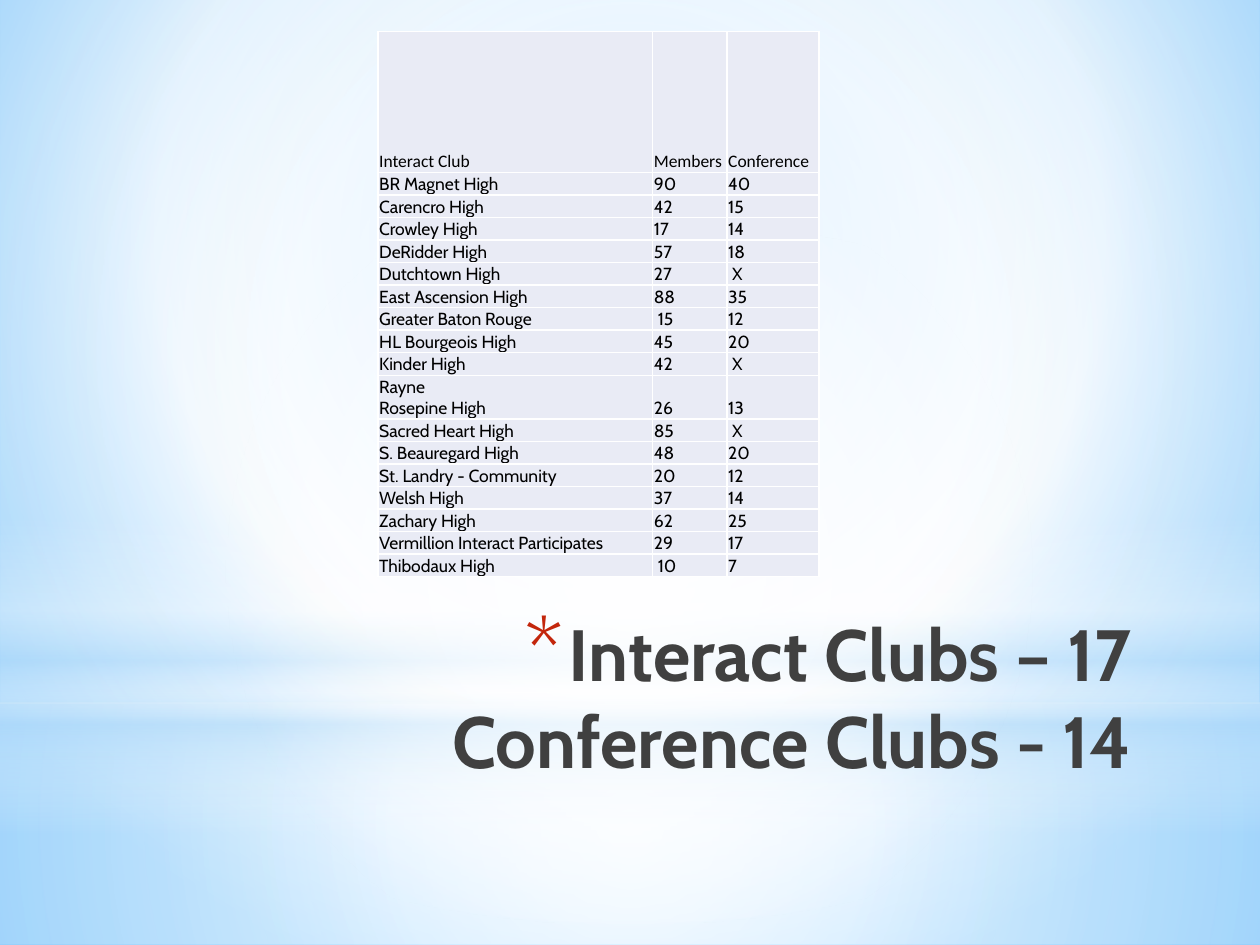
"""Build the Interact clubs slide: a membership table above a headline."""
from lxml.etree import SubElement
from pptx import Presentation
from pptx.dml.color import RGBColor
from pptx.enum.shapes import MSO_SHAPE as Preset
from pptx.enum.text import MSO_ANCHOR as Anchor, MSO_AUTO_SIZE as AutoSize, PP_ALIGN as Align
from pptx.oxml import parse_xml
from pptx.oxml.ns import nsdecls, qn
from pptx.util import Inches, Pt

WHITE = RGBColor(0xFF, 0xFF, 0xFF)
BLACK = RGBColor(0x00, 0x00, 0x00)
CHARCOAL = RGBColor(0x40, 0x40, 0x40)
RED = RGBColor(0xC3, 0x26, 0x0C)
LAVENDER = RGBColor(0xE9, 0xEB, 0xF5)
SKY = RGBColor(0x9E, 0xD5, 0xFF)
AZURE = RGBColor(0x5B, 0xB9, 0xFF)
PALE_BLUE = RGBColor(0xB4, 0xDC, 0xFA)

WIDTH, HEIGHT = 10, 7.5
CENTRE = (50, 50, 50, 50)
BACKDROP = [(0, SKY, 100), (60, WHITE, 100), (100, AZURE, 100)]
BACKDROP_FOCUS = (20, 10, 20, 60)
LAYERS = [
    (Preset.RECTANGLE, 5.58, 1.92, CENTRE,
     [(0, WHITE, 91), (37, WHITE, 76), (100, PALE_BLUE, 79)]),
    (Preset.RECTANGLE, 0, 5.58, CENTRE,
     [(0, WHITE, 89), (48, WHITE, 62), (100, PALE_BLUE, 79)]),
    (Preset.RECTANGLE, 4.12, 2.5, None,
     [(0, WHITE, 0), (29, WHITE, 30), (45, PALE_BLUE, 40),
      (55, WHITE, 26), (65, PALE_BLUE, 60), (100, WHITE, 0)]),
    (Preset.OVAL, 1.75, 5.58, CENTRE, [(0, WHITE, 100), (56, WHITE, 0)]),
]
HEADLINE = ["Interact Clubs – 17", "Conference Clubs - 14"]
CLUBS = [
    ("Interact Club", "Members", "Conference"),
    ("BR Magnet High", "90", "40"),
    ("Carencro High", "42", "15"),
    ("Crowley High", "17", "14"),
    ("DeRidder High", "57", "18"),
    ("Dutchtown High", "27", " X"),
    ("East Ascension High", "88", "35"),
    ("Greater Baton Rouge", " 15", "12 "),
    ("HL Bourgeois High", "45", "20"),
    ("Kinder High", "42", " X"),
    ("Rayne\nRosepine High", "26", "13"),
    ("Sacred Heart High", "85", " X"),
    ("S. Beauregard High", "48", "20"),
    ("St. Landry - Community", "20", "12"),
    ("Welsh High", "37", "14"),
    ("Zachary High", "62", "25"),
    ("Vermillion Interact Participates", "29", "17"),
    ("Thibodaux High", " 10", "7"),
]
COLUMNS = [2.18, 0.59, 0.73]
HEADER_ROW, LINE_ROW, EXTRA_LINE = 1.12, 0.15, 0.12


def set_gradient(parent, stops, focus):
    """Swap the parent's empty fill for a circular or top-down gradient."""
    gradient = parse_xml(f'<a:gradFill {nsdecls("a")} rotWithShape="1"/>')
    stop_list = SubElement(gradient, qn("a:gsLst"))
    for place, colour, opacity in stops:
        stop = SubElement(stop_list, qn("a:gs"), pos=str(place * 1000))
        shade = SubElement(stop, qn("a:srgbClr"), val=str(colour))
        if opacity < 100:
            SubElement(shade, qn("a:alpha"), val=str(opacity * 1000))
    if focus:
        circle = SubElement(gradient, qn("a:path"), path="circle")
        sides = {side: str(share * 1000) for side, share in zip("ltrb", focus)}
        SubElement(circle, qn("a:fillToRect"), sides)
    else:
        SubElement(gradient, qn("a:lin"), ang="5400000", scaled="0")
    parent.replace(parent.find(qn("a:noFill")), gradient)


def add_layer(page, preset, top, height, focus, stops):
    """Lay a full-width translucent band over the background."""
    shape = page.shapes.add_shape(preset, 0, Inches(top), Inches(WIDTH), Inches(height))
    shape.shadow.inherit = False
    shape.line.fill.background()
    shape.fill.background()
    set_gradient(shape.element.spPr, stops, focus)


def style_span(span, font, size, colour, bold=False):
    """Set the font of one run."""
    span.font.name, span.font.size, span.font.bold = font, Pt(size), bold
    span.font.color.rgb = colour


def write_headline(page):
    """Place the title in front of the layers with its asterisk bullet."""
    title = page.shapes.title
    title.element.getparent().append(title.element)
    title.left, title.top = Inches(1.96), Inches(4.78)
    title.width, title.height = Inches(7.12), Inches(1.25)
    frame = title.text_frame
    frame.auto_size, frame.word_wrap = AutoSize.NONE, True
    frame.vertical_anchor = Anchor.TOP
    para = frame.paragraphs[0]
    para.alignment = Align.RIGHT
    for number, line in enumerate(HEADLINE):
        if number:
            para.add_line_break()
        span = para.add_run()
        span.text = line
        style_span(span, "Cabin", 41.4, CHARCOAL, True)
    props = para._p.get_or_add_pPr()
    props.set("marL", str(Inches(0.35)))
    props.set("indent", str(-Inches(0.35)))
    SubElement(SubElement(props, qn("a:buClr")), qn("a:srgbClr"), val=str(RED))
    SubElement(props, qn("a:buSzPct"), val="128000")
    SubElement(props, qn("a:buFont"), typeface="Cabin")
    SubElement(props, qn("a:buChar"), char="*")


def fill_cell(cell, text, font):
    """Write one cell with its fill, insets and white borders."""
    cell.vertical_anchor = Anchor.BOTTOM
    cell.margin_left = cell.margin_right = cell.margin_top = Inches(0.01)
    cell.margin_bottom = 0
    cell.fill.solid()
    cell.fill.fore_color.rgb = LAVENDER
    for number, line in enumerate(text.split("\n")):
        frame = cell.text_frame
        para = frame.add_paragraph() if number else frame.paragraphs[0]
        span = para.add_run()
        span.text = line
        style_span(span, font, 10, BLACK)
    props = cell._tc.get_or_add_tcPr()
    for place, side in enumerate("LRTB"):
        props.insert(place, parse_xml(
            f'<a:ln{side} {nsdecls("a")} w="{Pt(1)}"><a:solidFill>'
            f'<a:srgbClr val="{WHITE}"/></a:solidFill></a:ln{side}>'))


def add_club_table(page):
    """Add the table of clubs, members and conference places."""
    heights = [HEADER_ROW] + [LINE_ROW + EXTRA_LINE * club[0].count("\n") for club in CLUBS[1:]]
    table = page.shapes.add_table(
        len(CLUBS), len(COLUMNS), Inches(3), Inches(0.25),
        Inches(sum(COLUMNS)), Inches(sum(heights))).table
    table.first_row = table.horz_banding = False
    for column, width in zip(table.columns, COLUMNS):
        column.width = Inches(width)
    for number, (row, height, club) in enumerate(zip(table.rows, heights, CLUBS)):
        row.height = Inches(height)
        for cell, text in zip(row.cells, club):
            fill_cell(cell, text, "Cabin" if number else "Calibri")


def main():
    """Assemble and save the deck."""
    deck = Presentation()
    deck.slide_width, deck.slide_height = Inches(WIDTH), Inches(HEIGHT)
    page = deck.slides.add_slide(deck.slide_layouts[5])
    set_gradient(page.element.cSld.get_or_add_bgPr(), BACKDROP, BACKDROP_FOCUS)
    for layer in LAYERS:
        add_layer(page, *layer)
    write_headline(page)
    add_club_table(page)
    deck.save("out.pptx")


if __name__ == "__main__":
    main()
